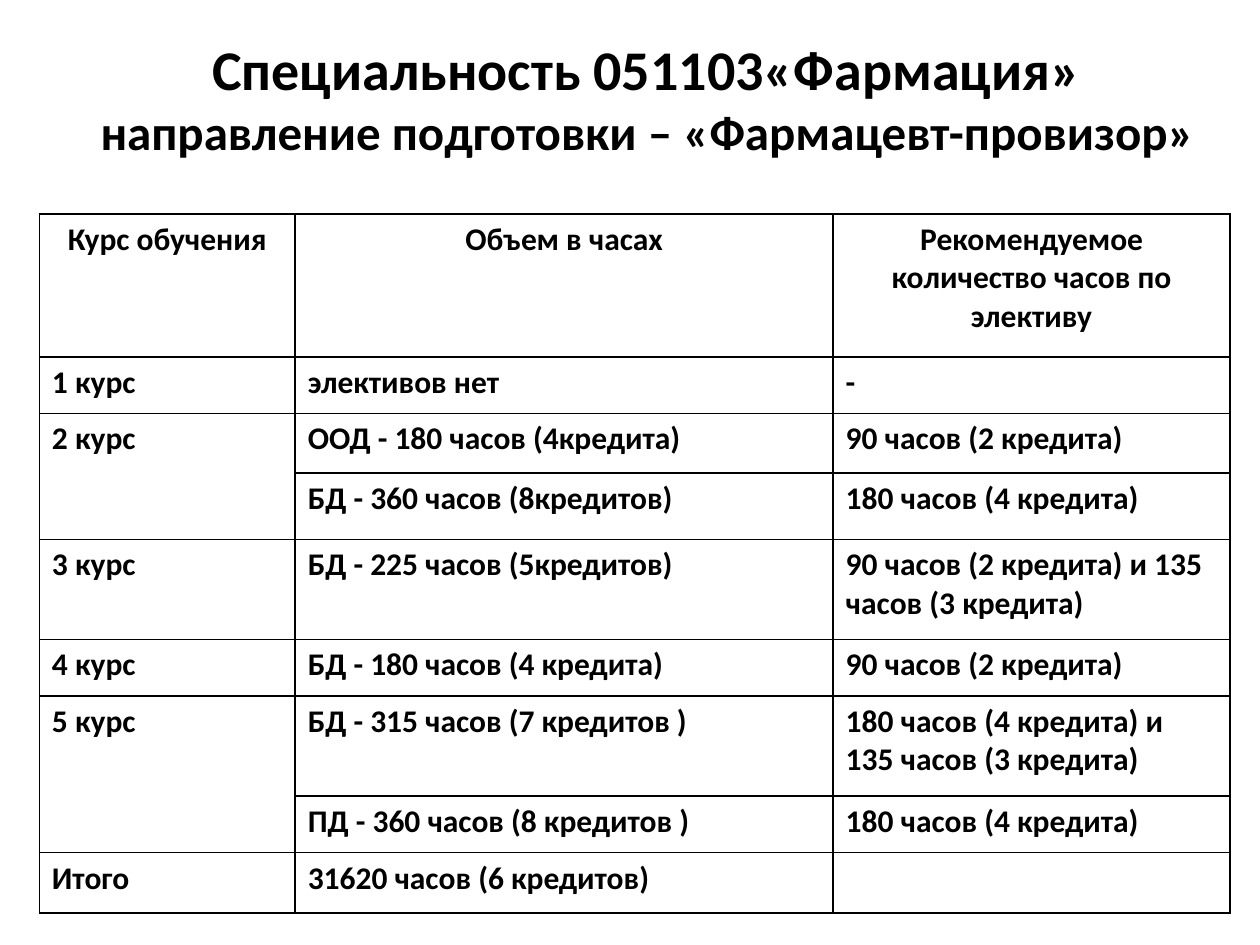
from dataclasses import dataclass

from lxml import etree
from pptx import Presentation
from pptx.dml.color import RGBColor
from pptx.enum.text import MSO_ANCHOR, PP_ALIGN
from pptx.oxml.ns import qn
from pptx.util import Pt

CENTER = PP_ALIGN.CENTER
LEFT = PP_ALIGN.LEFT
MIDDLE = MSO_ANCHOR.MIDDLE
FONT = "Calibri"
BLACK = "000000"
WHITE = "FFFFFF"
BORDER_WIDTH = 1
BODY_SIZE = 18


@dataclass(frozen=True)
class TableRow:
    height: float
    course: str
    volume: str
    elective: str
    course_rows: int = 1


TITLE_LINES = (
    ("Специальность 051103«Фармация»", 32),
    ("направление подготовки – «Фармацевт-провизор»", 28),
)
COLUMN_WIDTHS = (146.2, 307.4, 226.8)
ROWS = (
    TableRow(81.7, "Курс обучения", "Объем в часах",
             "Рекомендуемое количество часов по элективу"),
    TableRow(32.5, "1 курс", "элективов нет", "-"),
    TableRow(33.8, "2 курс", "ООД - 180 часов (4кредита)", "90 часов (2 кредита)", 2),
    TableRow(38.2, "", "БД - 360 часов (8кредитов)", "180 часов (4 кредита)"),
    TableRow(57, "3 курс", "БД - 225 часов (5кредитов)",
             "90 часов (2 кредита) и 135 часов (3 кредита)"),
    TableRow(32.5, "4 курс", "БД - 180 часов (4 кредита)", "90 часов (2 кредита)"),
    TableRow(57, "5 курс", "БД - 315 часов (7 кредитов )",
             "180 часов (4 кредита) и 135 часов (3 кредита)", 2),
    TableRow(32.5, "", "ПД - 360 часов (8 кредитов )", "180 часов (4 кредита)"),
    TableRow(34.5, "Итого", "31620 часов (6 кредитов)", ""),
)


def color(value: str) -> RGBColor:
    return RGBColor.from_string(value)


def add_run(paragraph, text: str, size: float) -> None:
    run = paragraph.add_run()
    run.text = text
    run.font.name = FONT
    run.font.size = Pt(size)
    run.font.bold = True
    run.font.color.rgb = color(BLACK)


def add_borders(cell) -> None:
    properties = cell._tc.get_or_add_tcPr()
    for side in ("a:lnL", "a:lnR", "a:lnT", "a:lnB"):
        line = etree.SubElement(properties, qn(side), w=str(Pt(BORDER_WIDTH)))
        fill = etree.SubElement(line, qn("a:solidFill"))
        etree.SubElement(fill, qn("a:srgbClr"), val=BLACK)


def fill_cell(cell, text: str, alignment: PP_ALIGN) -> None:
    add_borders(cell)
    cell.fill.solid()
    cell.fill.fore_color.rgb = color(WHITE)
    paragraph = cell.text_frame.paragraphs[0]
    paragraph.alignment = alignment
    if text:
        add_run(paragraph, text, BODY_SIZE)


def add_title(slide) -> None:
    shape = slide.shapes.add_textbox(Pt(36), Pt(0), Pt(667.5), Pt(111.6))
    frame = shape.text_frame
    frame.word_wrap = True
    frame.vertical_anchor = MIDDLE
    paragraph = frame.paragraphs[0]
    paragraph.alignment = CENTER
    for index, (text, size) in enumerate(TITLE_LINES):
        if index:
            paragraph.add_line_break()
        add_run(paragraph, text, size)


def add_hours_table(slide) -> None:
    shape = slide.shapes.add_table(
        len(ROWS), len(COLUMN_WIDTHS), Pt(22.5), Pt(122.2),
        Pt(sum(COLUMN_WIDTHS)), Pt(sum(row.height for row in ROWS)))
    table = shape.table
    table.first_row = False
    table.horz_banding = False
    for column, width in zip(table.columns, COLUMN_WIDTHS):
        column.width = Pt(width)
    for index, row in enumerate(ROWS):
        table.rows[index].height = Pt(row.height)
        alignment = LEFT if index else CENTER
        for column, text in enumerate((row.course, row.volume, row.elective)):
            fill_cell(table.cell(index, column), text, alignment)
        if row.course_rows > 1:
            table.cell(index, 0).merge(table.cell(index + row.course_rows - 1, 0))


def main() -> None:
    presentation = Presentation()
    presentation.slide_width = Pt(720)
    presentation.slide_height = Pt(540)
    slide = presentation.slides.add_slide(presentation.slide_layouts[6])
    add_title(slide)
    add_hours_table(slide)
    presentation.save("out.pptx")


if __name__ == "__main__":
    main()
